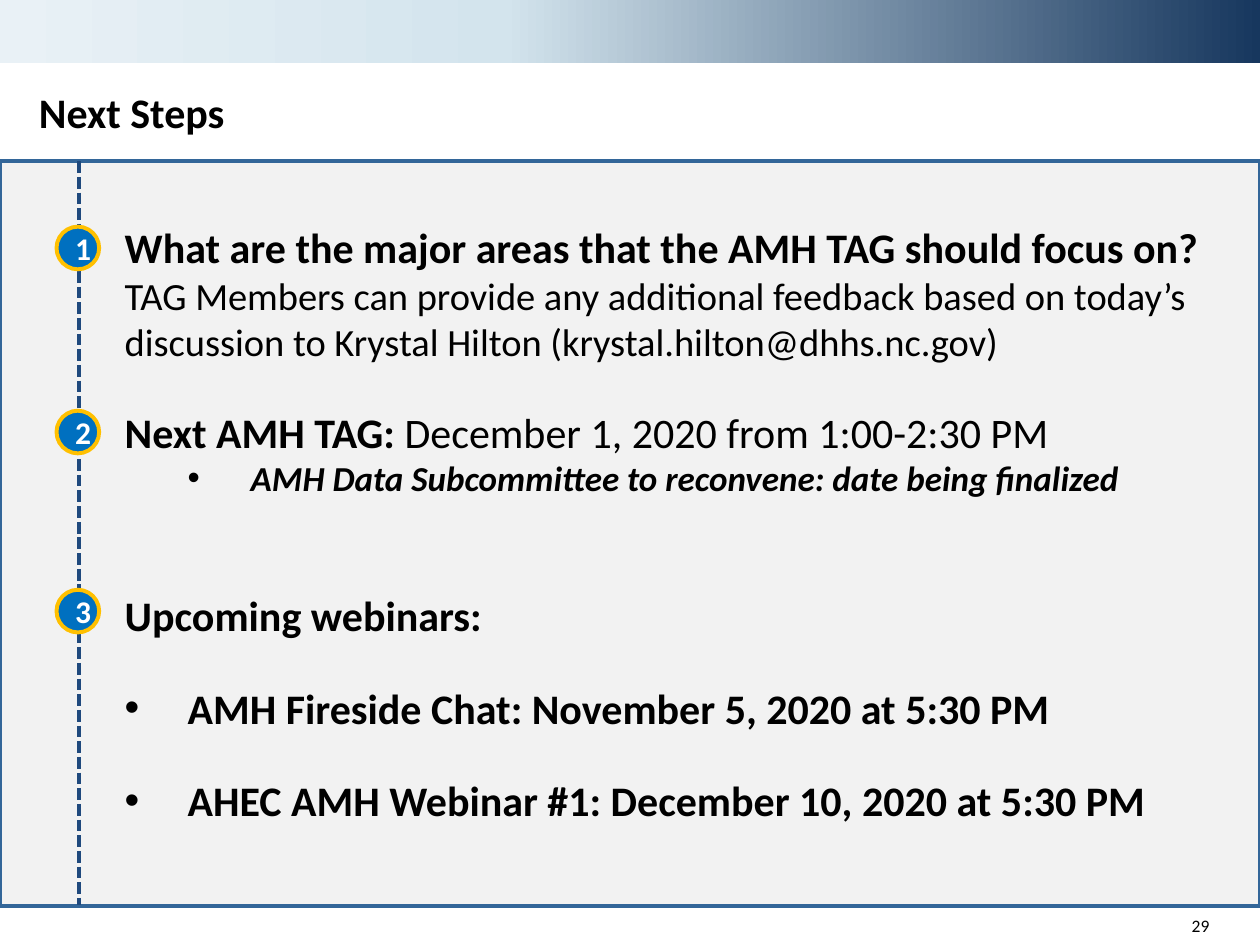
from copy import deepcopy

from lxml import etree
from pptx import Presentation
from pptx.dml.color import RGBColor
from pptx.enum.dml import MSO_LINE
from pptx.enum.shapes import MSO_CONNECTOR, MSO_SHAPE
from pptx.enum.text import MSO_ANCHOR, MSO_AUTO_SIZE, PP_ALIGN
from pptx.oxml.ns import qn
from pptx.util import Cm, Pt

STRAIGHT = MSO_CONNECTOR.STRAIGHT
RECTANGLE, OVAL = MSO_SHAPE.RECTANGLE, MSO_SHAPE.OVAL
TOP, MIDDLE = MSO_ANCHOR.TOP, MSO_ANCHOR.MIDDLE
LEFT, CENTER, RIGHT = PP_ALIGN.LEFT, PP_ALIGN.CENTER, PP_ALIGN.RIGHT
NO_AUTOFIT = MSO_AUTO_SIZE.NONE
SQUARE_DASH = MSO_LINE.SQUARE_DOT

BLACK = RGBColor(0x00, 0x00, 0x00)
WHITE = RGBColor(0xFF, 0xFF, 0xFF)
NAVY = RGBColor(0x17, 0x37, 0x5E)
PALE_BLUE = RGBColor(0xD3, 0xE4, 0xED)
ICE_BLUE = RGBColor(0xE9, 0xF1, 0xF6)
DARK_BLUE = RGBColor(0x00, 0x20, 0x60)
PANEL_GRAY = RGBColor(0xF2, 0xF2, 0xF2)
PANEL_BLUE = RGBColor(0x33, 0x66, 0x99)
TIMELINE_BLUE = RGBColor(0x1F, 0x49, 0x7D)
MARKER_BLUE = RGBColor(0x00, 0x70, 0xC0)
MARKER_GOLD = RGBColor(0xFF, 0xC0, 0x00)


def add_run(paragraph, text, size, color=BLACK, **formats):
    run = paragraph.add_run()
    run.text = text
    run.font.color.rgb = color
    formats = {"name": "Calibri", "size": Pt(size), "bold": False, **formats}
    for name, value in formats.items():
        setattr(run.font, name, value)


def add_line(x1, y1, x2, y2, color, width):
    connector = slide.shapes.add_connector(STRAIGHT, Cm(x1), Cm(y1), Cm(x2), Cm(y2))
    connector.line.color.rgb = color
    connector.line.width = Pt(width)
    etree.SubElement(connector.element.spPr, qn("a:effectLst"))
    return connector


presentation = Presentation()
presentation.slide_width = Cm(25.4)
presentation.slide_height = Cm(19.05)
slide = presentation.slides.add_slide(presentation.slide_layouts[1])
title, body = slide.placeholders

# Gradient band across the top
band = slide.shapes.add_shape(RECTANGLE, 0, 0, Cm(25.4), Cm(1.27))
band.shadow.inherit = False
band.line.fill.background()
band.fill.gradient()
band.fill.gradient_angle = 180
first_stop = band.element.find(".//" + qn("a:gs"))
first_stop.addnext(deepcopy(first_stop))
stops = [(0, NAVY), (0.6, PALE_BLUE), (1, ICE_BLUE)]
for stop, (position, color) in zip(band.fill.gradient_stops, stops):
    stop.position = position
    stop.color.rgb = color

# Rules and content panel
add_line(0, 18.26, 25.4, 18.26, NAVY, 2.25)
add_line(0, 3.28, 25.4, 3.28, DARK_BLUE, 2)
panel = slide.shapes.add_shape(RECTANGLE, 0, Cm(3.25), Cm(25.4), Cm(15.01))
panel.shadow.inherit = False
panel.fill.solid()
panel.fill.fore_color.rgb = PANEL_GRAY
panel.line.color.rgb = PANEL_BLUE
panel.line.width = Pt(2.25)

# Dashed timeline
timeline = add_line(1.6, 3.25, 1.6, 18.24, TIMELINE_BLUE, 2.25)
timeline.line.dash_style = SQUARE_DASH

# Title and body stand in front of the panel
places = [(title, 0.53, 1.73, 24.33, 1.52), (body, 0.84, 4.34, 23.72, 12.8)]
for shape, left, top, width, height in places:
    slide.shapes.element.append(shape.element)
    shape.left, shape.top = Cm(left), Cm(top)
    shape.width, shape.height = Cm(width), Cm(height)
    shape.text_frame.auto_size = NO_AUTOFIT
    shape.text_frame.vertical_anchor = TOP
heading = title.text_frame.paragraphs[0]
heading.alignment = LEFT
heading.line_spacing = 0.9
add_run(heading, "Next Steps", 24, bold=True)

# Steps: level, text indent in cm, bullet, space after, runs
bold, bold_italic = {"bold": True}, {"bold": True, "italic": True}
steps = [
    (0, 1.42, False, 24, [
        ("What are the major areas that the AMH TAG should focus on? ", 24, bold),
        ("TAG Members can provide any additional feedback based on today’s "
         "discussion to Krystal Hilton (krystal.hilton@dhhs.nc.gov)", 22, {})]),
    (0, 1.42, False, 0, [
        ("Next AMH TAG: ", 24, bold),
        ("December 1, 2020 from 1:00-2:30 PM", 24, {})]),
    (2, 3.96, True, 52, [
        ("AMH Data Subcommittee to reconvene: date being finalized", 20, bold_italic)]),
    (0, 1.42, False, 24, [("Upcoming webinars:", 24, bold)]),
    (1, 2.69, True, 24, [
        ("AMH Fireside Chat: November 5, 2020 at 5:30 PM", 24, bold)]),
    (1, 2.69, True, 24, [
        ("AHEC AMH Webinar #1: December 10, 2020 at 5:30 PM", 24, bold)]),
]
for index, (level, indent, bulleted, space_after, runs) in enumerate(steps):
    frame = body.text_frame
    paragraph = frame.add_paragraph() if index else frame.paragraphs[0]
    paragraph.level = level
    paragraph.space_before = Pt(0)
    paragraph.space_after = Pt(space_after)
    properties = paragraph._p.get_or_add_pPr()
    properties.set("marL", str(Cm(indent)))
    properties.set("indent", str(Cm(-1.27) if bulleted else 0))
    if bulleted:
        etree.SubElement(properties, qn("a:buFont"), typeface="Arial")
        etree.SubElement(properties, qn("a:buChar"), char="•")
    else:
        etree.SubElement(properties, qn("a:buNone"))
    for text, size, formats in runs:
        add_run(paragraph, text, size, **formats)

# Numbered markers on the timeline
for number, top in enumerate([4.57, 8.28, 11.89], start=1):
    marker = slide.shapes.add_shape(OVAL, Cm(1.14), Cm(top), Cm(0.86), Cm(0.86))
    marker.shadow.inherit = False
    marker.fill.solid()
    marker.fill.fore_color.rgb = MARKER_BLUE
    marker.line.color.rgb = MARKER_GOLD
    marker.line.width = Pt(2.25)
    marker.text_frame.vertical_anchor = MIDDLE
    paragraph = marker.text_frame.paragraphs[0]
    paragraph.alignment = CENTER
    add_run(paragraph, str(number), 18, WHITE, bold=True)

# Page number
page_number = slide.shapes.add_textbox(Cm(23.06), Cm(18.26), Cm(1.57), Cm(0.79))
page_number.text_frame.word_wrap = True
page_number.text_frame.vertical_anchor = MIDDLE
paragraph = page_number.text_frame.paragraphs[0]
paragraph.alignment = RIGHT
add_run(paragraph, "29", 10)

presentation.save("out.pptx")
